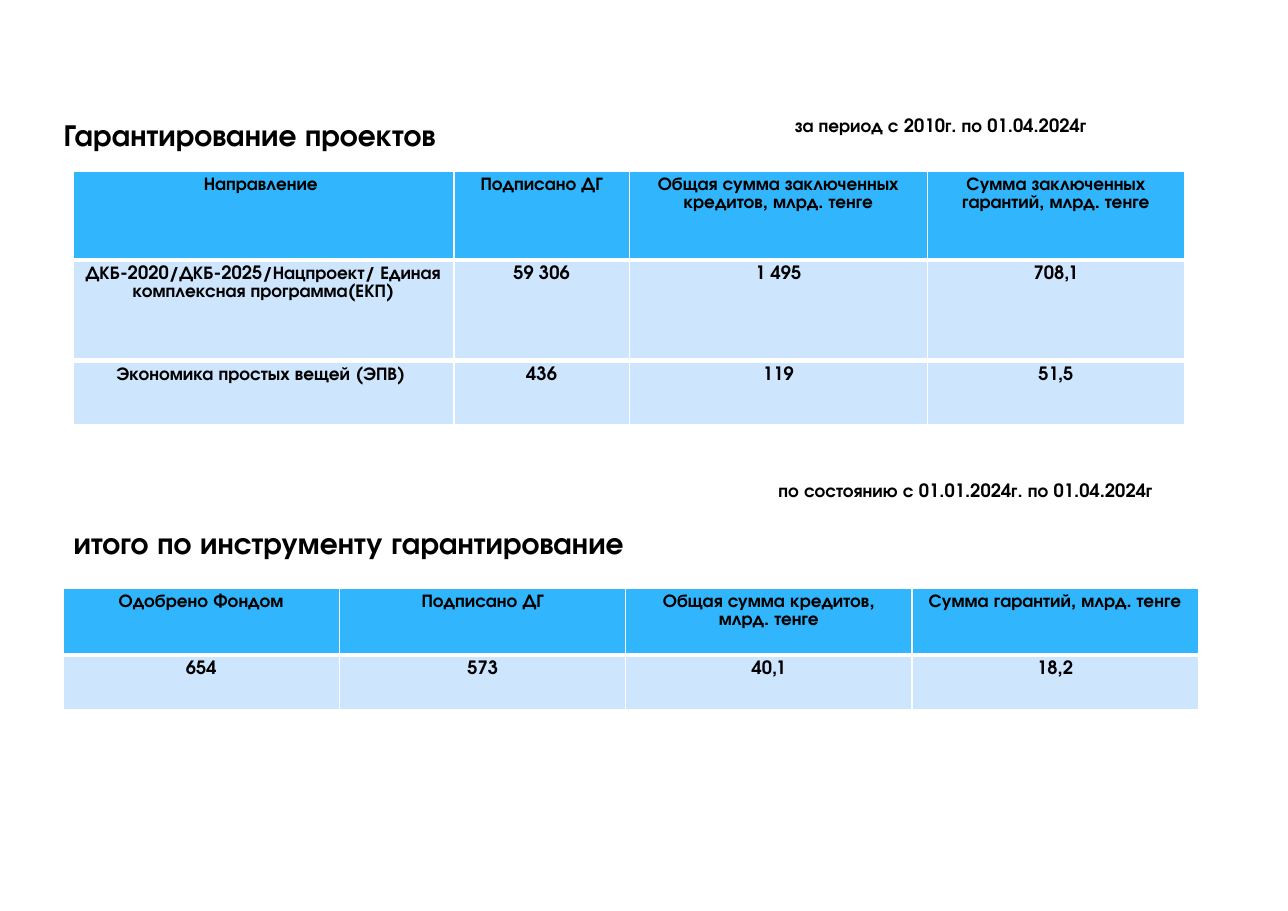
import pptx
import pptx.util
from pptx.dml.color import RGBColor
from pptx.enum.text import MSO_AUTO_SIZE, PP_ALIGN
from pptx.oxml import parse_xml
from pptx.oxml.ns import nsdecls
from pptx.util import Cm, Pt

FONT = "TeX Gyre Adventor"
BLACK = RGBColor(0x00, 0x00, 0x00)
HEADER_BLUE = RGBColor(0x31, 0xB6, 0xFD)
BODY_BLUE = RGBColor(0xCE, 0xE5, 0xFE)
WHITE = RGBColor(0xFF, 0xFF, 0xFF)

# Text, size in points, then left, top, width and height in cm
LABELS = [
    ("за период с 2010г. по 01.04.2024г", 12, (18.08, 2.51, 9.22, 0.76)),
    ("Гарантирование проектов", 20, (1.22, 2.54, 18.39, 1.12)),
    ("итого по инструменту гарантирование", 20, (1.45, 11.96, 17.83, 1.12)),
    ("по состоянию с 01.01.2024г. по 01.04.2024г", 12, (17.7, 10.92, 10, 0.76)),
]

# Positions, column widths and row heights in cm
TABLES = [
    {
        "left": 1.68, "top": 3.94,
        "columns": [8.79, 4.04, 6.88, 5.92],
        "heights": [2.06, 2.31, 1.5],
        "rows": [
            ["Направление ", "Подписано ДГ",
             "Общая сумма заключенных кредитов, млрд. тенге",
             "Сумма заключенных гарантий, млрд. тенге"],
            ["ДКБ-2020/ДКБ-2025/Нацпроект/ Единая комплексная программа(ЕКП)",
             "59 306", "1 495", "708,1"],
            ["Экономика простых вещей (ЭПВ) ", "436", "119", "51,5"],
        ],
    },
    {
        "left": 1.45, "top": 13.56,
        "columns": [6.38, 6.6, 6.6, 6.6],
        "heights": [1.53, 1.3],
        "rows": [
            ["Одобрено Фондом", "Подписано ДГ",
             "Общая сумма кредитов, млрд. тенге", "Сумма гарантий, млрд. тенге"],
            ["654", "573", "40,1", "18,2"],
        ],
    },
]


def set_font(paragraph, size):
    paragraph.font.name = FONT
    paragraph.font.size = Pt(size)
    paragraph.font.bold = True
    paragraph.font.color.rgb = BLACK


def add_label(slide, text, size, box):
    frame = slide.shapes.add_textbox(*map(Cm, box)).text_frame
    frame.word_wrap = True
    frame.auto_size = MSO_AUTO_SIZE.SHAPE_TO_FIT_TEXT
    frame.text = text
    set_font(frame.paragraphs[0], size)


def set_borders(cell, widths):
    properties = cell._tc.get_or_add_tcPr()
    for side, width in widths.items():
        properties.append(parse_xml(
            f'<a:ln{side} {nsdecls("a")} w="{Pt(width)}"><a:solidFill>'
            f'<a:srgbClr val="{WHITE}"/></a:solidFill></a:ln{side}>'))


def fill_cell(cell, text, is_header):
    set_borders(cell, {"L": 1, "R": 1, "T": 1 if is_header else 3, "B": 3})
    cell.fill.solid()
    cell.fill.fore_color.rgb = HEADER_BLUE if is_header else BODY_BLUE
    cell.text = text
    paragraph = cell.text_frame.paragraphs[0]
    paragraph.alignment = PP_ALIGN.CENTER
    paragraph.line_spacing = Pt(11.5)
    set_font(paragraph, 12)


def add_table(slide, data):
    rows, columns, heights = data["rows"], data["columns"], data["heights"]
    table = slide.shapes.add_table(
        len(rows), len(columns), Cm(data["left"]), Cm(data["top"]),
        Cm(sum(columns)), Cm(sum(heights))).table
    for column, width in zip(table.columns, columns):
        column.width = Cm(width)
    for row_index, (row, height) in enumerate(zip(table.rows, heights)):
        row.height = Cm(height)
        for cell, text in zip(row.cells, rows[row_index]):
            fill_cell(cell, text, row_index == 0)


def main():
    presentation = pptx.Presentation()
    presentation.slide_width = Cm(29.7)
    presentation.slide_height = Cm(21)
    slide = presentation.slides.add_slide(presentation.slide_layouts[6])

    # Titles and dates
    for text, size, box in LABELS:
        add_label(slide, text, size, box)

    # Guarantee figures
    for data in TABLES:
        add_table(slide, data)

    presentation.save("out.pptx")


if __name__ == "__main__":
    main()
